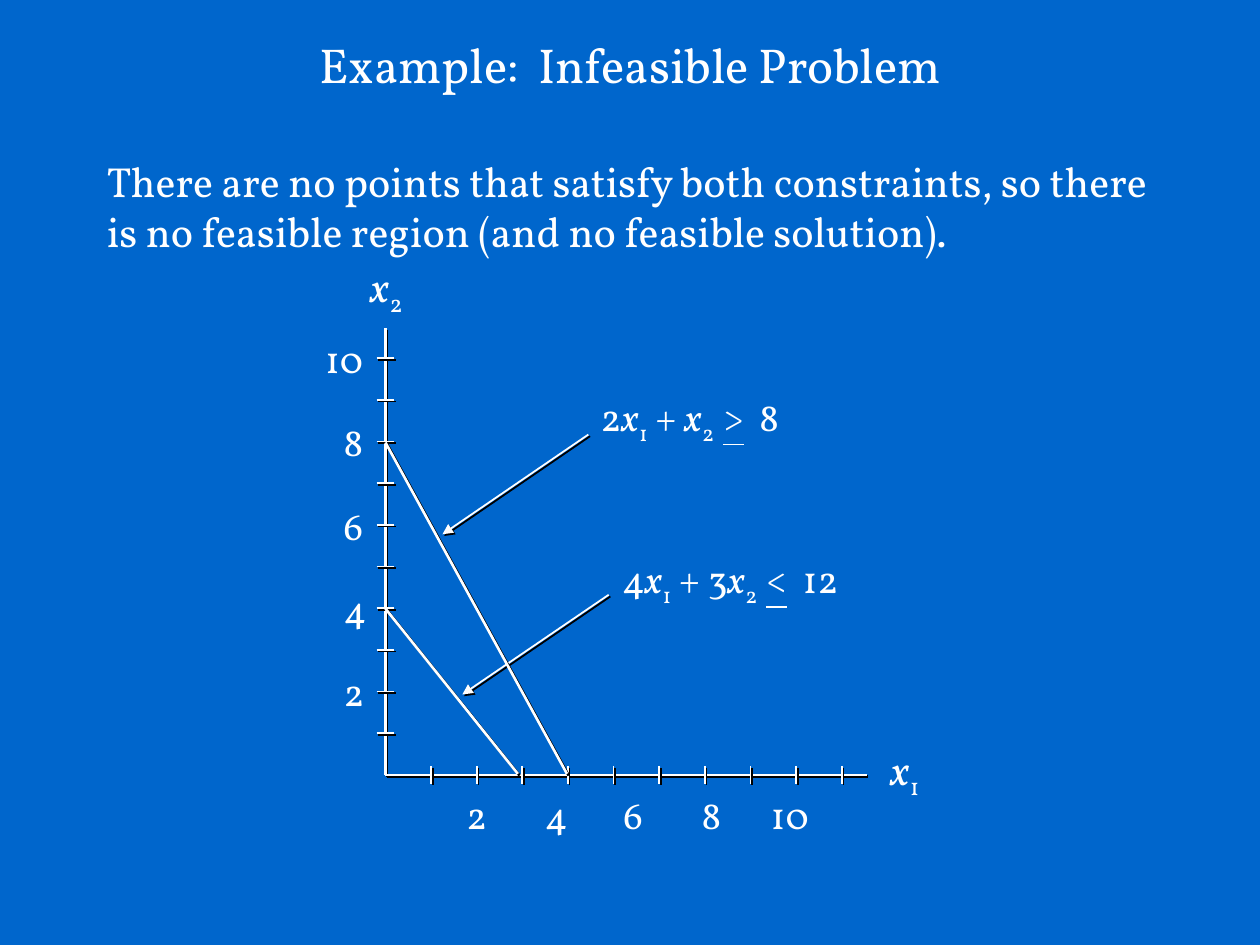
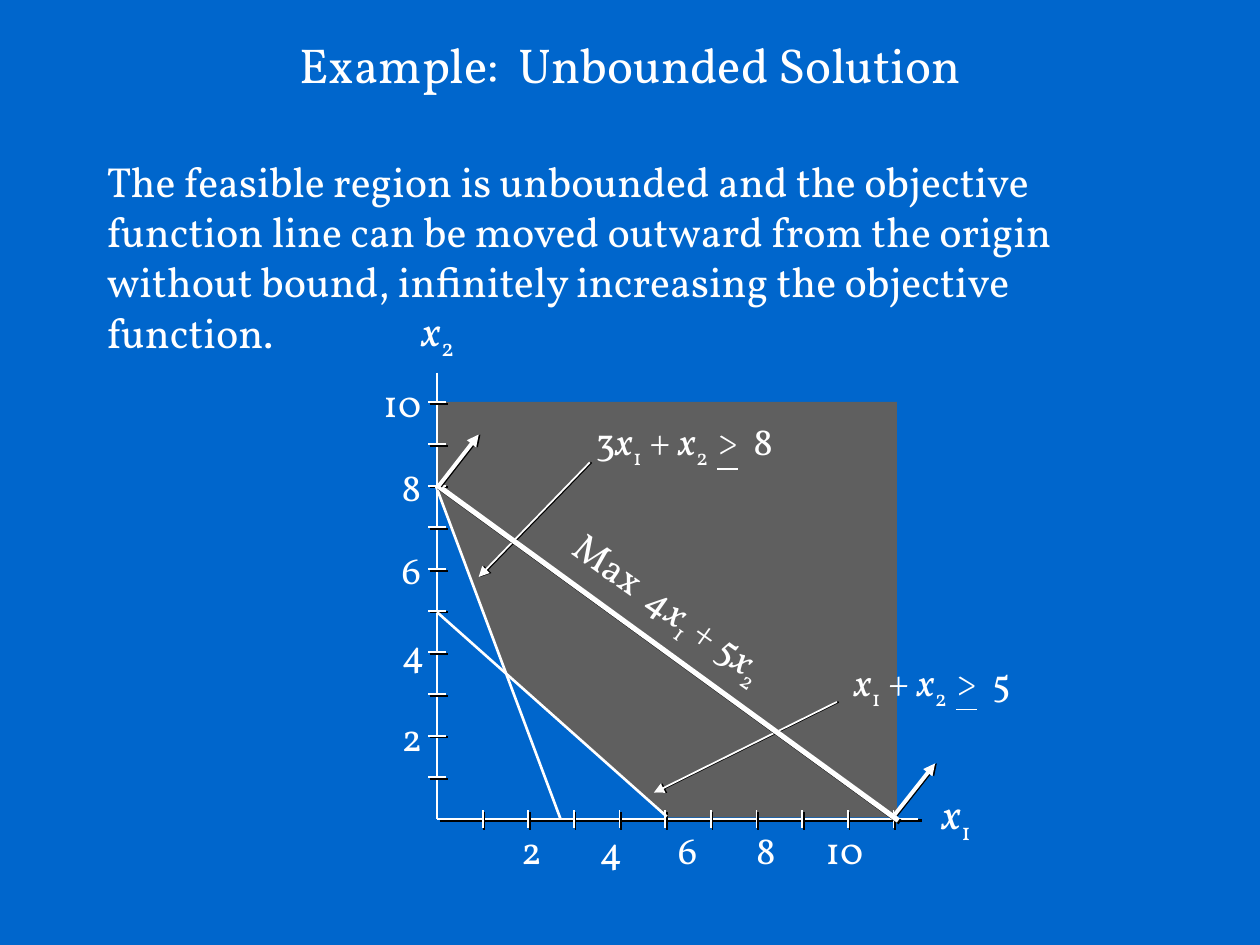
from lxml import etree
from pptx import Presentation
from pptx.dml.color import RGBColor
from pptx.enum.shapes import MSO_CONNECTOR
from pptx.enum.text import MSO_ANCHOR, MSO_AUTO_SIZE, PP_ALIGN
from pptx.oxml.ns import qn
from pptx.util import Cm, Pt

hex_color = RGBColor.from_string
BLUE, WHITE, GRAY, BLACK = "0066CC", "FFFFFF", "5F5F5F", "000000"
FONT = "Vollkorn"

# Plot grid in centimetres
X_STEP, Y_STEP, HALF_TICK = 0.92, 0.84, 0.18
NUMBER_STEP, NUMBER_HEIGHT = 1.58, 1.17

# Shadows as distance in points and direction in degrees
DROP, SIDE, AXIS_DROP = (1.4, 45), (1, 0), (2.2, 27)


def add_line(slide, ends, width=1.0, shadow=None, arrow=False):
    """Draw a white line between two points, with optional shadow and arrowhead."""
    line = slide.shapes.add_connector(MSO_CONNECTOR.STRAIGHT, *map(Cm, ends))
    line.line.color.rgb = hex_color(WHITE)
    line.line.width = Pt(width)
    properties = line._element.spPr
    if arrow:
        etree.SubElement(properties.find(qn("a:ln")), qn("a:tailEnd"), type="triangle")
    effects = etree.SubElement(properties, qn("a:effectLst"))
    if shadow:
        distance, angle = shadow
        outer = etree.SubElement(effects, qn("a:outerShdw"), blurRad="0",
                                 dist=str(Pt(distance)), dir=str(angle * 60000),
                                 algn="ctr", rotWithShape="0")
        etree.SubElement(outer, qn("a:srgbClr"), val=BLACK)


def add_label(slide, box, text, size=22, align=PP_ALIGN.LEFT, inset=0.35):
    """Add a label; bars split its parts, and the part after an x is a subscript."""
    label = slide.shapes.add_textbox(*map(Cm, box))
    frame = label.text_frame
    frame.word_wrap = False
    frame.vertical_anchor = MSO_ANCHOR.MIDDLE
    frame.margin_left = frame.margin_right = Cm(inset)
    paragraph = frame.paragraphs[0]
    paragraph.alignment = align
    previous = ""
    for part in text.split("|"):
        run = paragraph.add_run()
        run.text = part
        run.font.name, run.font.size = FONT, Pt(size)
        run.font.color.rgb = hex_color(WHITE)
        if part == "x":
            run.font.italic = True
        elif previous == "x":
            run.font._element.set("baseline", "-25000")
        elif part in ("<", ">"):
            run.font.underline = True
        previous = part
    return label


# Content of the two examples: lines are (ends, width, shadow, arrow)
examples = [
    dict(
        title="Example:  Infeasible Problem",
        message="There are no points that satisfy both constraints, so there is no "
                "feasible region (and no feasible solution).",
        message_height=2.31,
        origin=(7.77, 15.62),
        numbers_right=7.57, numbers_left=9.6, numbers_top=15.82,
        region=[],
        axis_shadows=(DROP, DROP),
        lines=[
            ((12.27, 11.99, 9.32, 14), 1, DROP, True),
            ((11.86, 8.76, 8.92, 10.77), 1, DROP, True),
            ((7.77, 12.27, 10.44, 15.6), 1.5, DROP, False),
            ((7.77, 8.92, 11.43, 15.6), 1.5, DROP, False),
        ],
        formulas=[
            ((12.19, 11.07, 5.69, 1.3), "4|x|1| + 3|x|2  |<|  12", 0),
            ((11.76, 7.8, 4.9, 1.3), "2|x|1| + |x|2  |>|  8", 0),
        ],
    ),
    dict(
        title="Example:  Unbounded Solution",
        message="The feasible region is unbounded and the objective function line can "
                "be moved outward from the origin without bound, infinitely increasing "
                "the objective function.",
        message_height=5.72,
        origin=(8.81, 16.51),
        numbers_right=8.74, numbers_left=10.7, numbers_top=16.54,
        region=[(8.81, 8.1), (18.08, 8.1), (18.08, 16.48), (13.46, 16.48),
                (10.21, 13.56), (8.81, 9.93)],
        axis_shadows=(None, AXIS_DROP),
        lines=[
            ((11.89, 9.32, 9.65, 11.63), 1, SIDE, True),
            ((16.87, 14.15, 13.18, 15.98), 1, SIDE, True),
            ((8.81, 12.34, 13.44, 16.46), 1.5, None, False),
            ((8.79, 9.8, 11.3, 16.51), 1.5, None, False),
            ((18.03, 16.43, 18.85, 15.39), 2.25, SIDE, True),
            ((8.81, 9.78, 18.11, 16.54), 3, DROP, False),
            ((8.84, 9.8, 9.65, 8.76), 2.25, SIDE, True),
        ],
        formulas=[
            ((11.66, 8.31, 4.88, 1.27), "3|x|1| + |x|2  |>|  8", 0),
            ((16.87, 13.16, 4.47, 1.27), "x|1| + |x|2  |>|  5", 0),
            ((10.85, 11.73, 5.54, 1.27), "Max  4|x|1| + 5|x|2", 35.3),
        ],
    ),
]

# Shared background and title position
prs = Presentation()
prs.slide_width, prs.slide_height = Cm(25.4), Cm(19.05)
background = prs.slide_master.background.fill
background.solid()
background.fore_color.rgb = hex_color(BLUE)
layout = prs.slide_layouts[1]
title_area = layout.placeholders[0]
title_area.left, title_area.top = Cm(1.9), Cm(0.15)
title_area.width, title_area.height = Cm(21.6), Cm(2.26)

for example in examples:
    slide = prs.slides.add_slide(layout)

    # Title and message
    title, message = slide.placeholders
    message.left, message.top = Cm(1.9), Cm(3)
    message.width, message.height = Cm(21.9), Cm(example["message_height"])
    for holder, text, size in ((title, example["title"], 28),
                               (message, example["message"], 24)):
        holder.text_frame.text = text
        holder.text_frame.auto_size = MSO_AUTO_SIZE.NONE
        font = holder.text_frame.paragraphs[0].runs[0].font
        font.name, font.size = FONT, Pt(size)
        font.color.rgb = hex_color(WHITE)
    title.text_frame.vertical_anchor = MSO_ANCHOR.MIDDLE
    title.text_frame.paragraphs[0].alignment = PP_ALIGN.CENTER
    indents = message.text_frame.paragraphs[0]._p.get_or_add_pPr()
    indents.set("marL", "0")
    indents.set("indent", "0")
    etree.SubElement(indents, qn("a:buNone"))

    # Feasible region
    if example["region"]:
        corners = [(Cm(x), Cm(y)) for x, y in example["region"]]
        builder = slide.shapes.build_freeform(*corners[0])
        builder.add_line_segments(corners[1:], close=True)
        region = builder.convert_to_shape()
        region.shadow.inherit = False
        region.fill.solid()
        region.fill.fore_color.rgb = hex_color(GRAY)
        region.line.fill.background()

    # Axes and their names
    x0, y0 = example["origin"]
    y_shadow, x_shadow = example["axis_shadows"]
    add_line(slide, (x0, y0 - 9, x0, y0), 1.5, y_shadow)
    add_line(slide, (x0, y0, x0 + 9.7, y0), 1.5, x_shadow)
    add_label(slide, (x0 - 0.66, y0 - 10.48, 1.42, 1.37), "x|2", size=24)
    add_label(slide, (x0 + 9.83, y0 - 0.74, 1.42, 1.37), "x|1", size=24)

    # Ticks, with a number at every second one
    for tick in range(1, 11):
        x, y = x0 + tick * X_STEP, y0 - tick * Y_STEP
        add_line(slide, (x0 - HALF_TICK, y, x0 + HALF_TICK, y), shadow=DROP)
        add_line(slide, (x, y0 - HALF_TICK, x, y0 + HALF_TICK), shadow=DROP)
        if tick % 2 == 0:
            width = 1.27 if tick == 10 else 0.89
            add_label(slide, (example["numbers_right"] - width, y - NUMBER_HEIGHT / 2,
                              width, NUMBER_HEIGHT),
                      str(tick), align=PP_ALIGN.RIGHT, inset=0.25)
            middle = example["numbers_left"] + (tick // 2 - 1) * NUMBER_STEP
            add_label(slide, (middle - width / 2, example["numbers_top"],
                              width, NUMBER_HEIGHT),
                      str(tick), align=PP_ALIGN.CENTER, inset=0.25)

    # Constraints, objective and pointers
    for ends, width, shadow, arrow in example["lines"]:
        add_line(slide, ends, width, shadow, arrow)
    for box, formula, angle in example["formulas"]:
        add_label(slide, box, formula).rotation = angle

prs.save("out.pptx")
